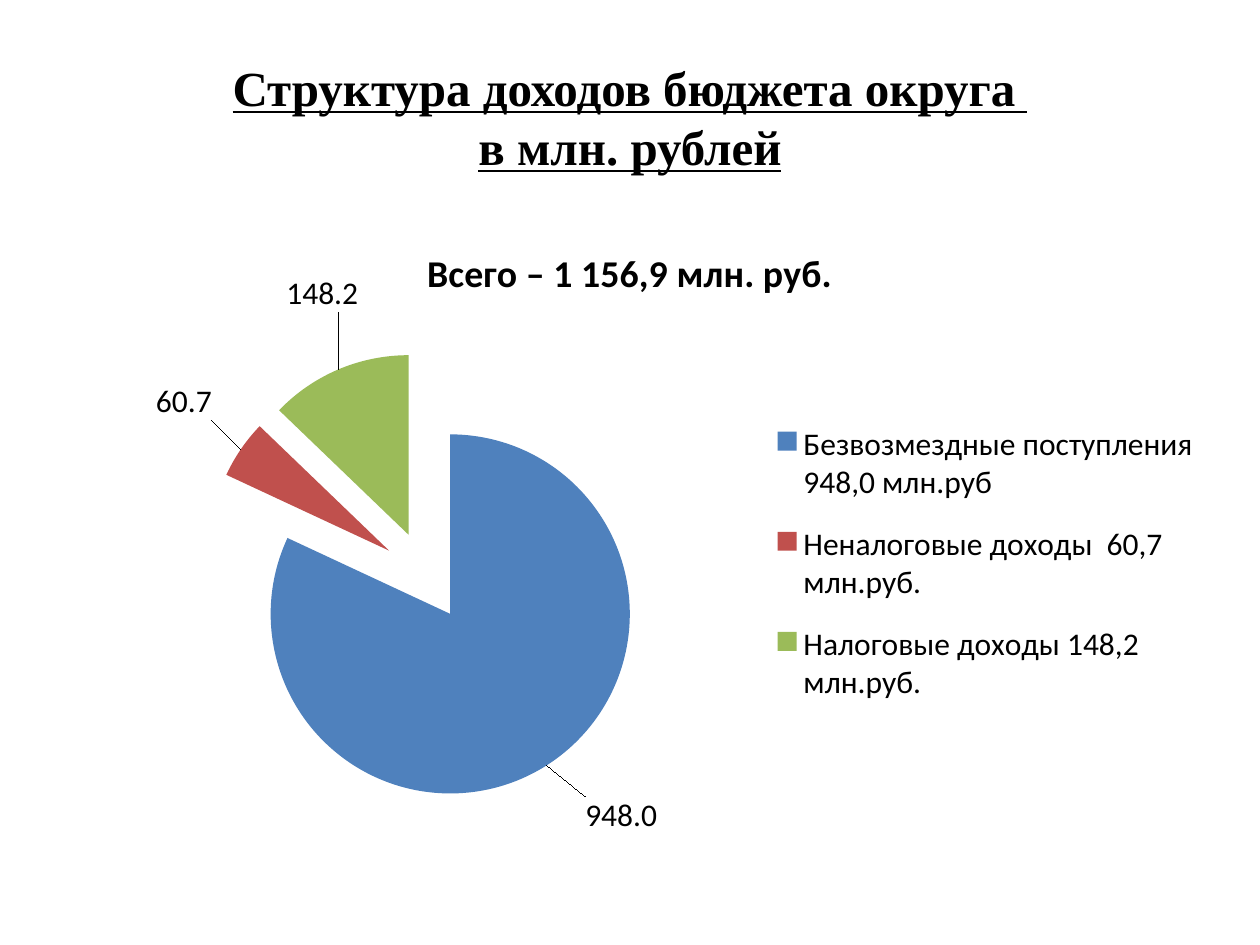
from lxml.etree import SubElement
from pptx import Presentation
from pptx.chart.data import CategoryChartData
from pptx.dml.color import RGBColor
from pptx.enum.chart import XL_CHART_TYPE, XL_LABEL_POSITION, XL_LEGEND_POSITION
from pptx.enum.text import MSO_ANCHOR, MSO_AUTO_SIZE, PP_ALIGN
from pptx.oxml.ns import qn
from pptx.util import Cm, Pt

COLORS = {
    "text": "000000",
    "grants": "4F81BD",
    "non_tax": "C0504D",
    "tax": "9BBB59",
}

# Category, value, colour, label shift as a share of the chart
INCOME = [
    ("Безвозмездные поступления 948,0 млн.руб", 948, "grants", (0.03, 0.04)),
    ("Неналоговые доходы  60,7 млн.руб.", 60.7, "non_tax", (-0.02, -0.04)),
    ("Налоговые доходы 148,2 млн.руб.", 148.2, "tax", (0.02, -0.08)),
]


def add_value(parent, tag, value):
    return SubElement(parent, qn(f"c:{tag}"), val=str(value))


def place(element, index, **settings):
    """Give a chart part a manual layout, in shares of the chart."""
    for old in element.findall(qn("c:layout")):
        element.remove(old)
    layout = SubElement(element, qn("c:layout"))
    manual = SubElement(layout, qn("c:manualLayout"))
    for tag, value in settings.items():
        add_value(manual, tag, value)
    element.insert(index, layout)


class SlideBuilder:
    body_font = "Calibri"
    title_font = "Times New Roman"
    number_format = "#,##0.0"
    edges = {"xMode": "edge", "yMode": "edge"}

    def __init__(self, deck):
        self.page = deck.slides.add_slide(deck.slide_layouts[5])

    def style(self, font, name, size, bold=False):
        font.name = name
        font.size = Pt(size)
        font.bold = bold
        font.color.rgb = RGBColor.from_string(COLORS["text"])

    def title(self, lines, left, top, width, height):
        box = self.page.shapes.title
        box.left, box.top, box.width, box.height = left, top, width, height
        frame = box.text_frame
        frame.auto_size = MSO_AUTO_SIZE.NONE
        frame.vertical_anchor = MSO_ANCHOR.MIDDLE
        para = frame.paragraphs[0]
        para.alignment = PP_ALIGN.CENTER
        for number, line in enumerate(lines):
            if number:
                para.add_line_break()
            span = para.add_run()
            span.text = line
            self.style(span.font, self.title_font, 28, bold=True)
            span.font.underline = True

    def pie(self, heading, rows, left, top, width, height):
        data = CategoryChartData(number_format=self.number_format)
        data.categories = [row[0] for row in rows]
        data.add_series("Series 1", [row[1] for row in rows])
        chart = self.page.shapes.add_chart(
            XL_CHART_TYPE.PIE, left, top, width, height, data
        ).chart
        self.style(chart.font, self.body_font, 18)
        self.chart_title(chart, heading)
        self.legend(chart)
        self.slices(chart.plots[0], rows)
        place(chart.plots[0]._element.getparent(), 0, layoutTarget="inner",
              **self.edges, x=0.12, y=0.21, w=0.39, h=0.72)

    def chart_title(self, chart, heading):
        chart.has_title = True
        span = chart.chart_title.text_frame.paragraphs[0].add_run()
        span.text = heading
        self.style(span.font, self.body_font, 21.6, bold=True)
        place(chart.chart_title._element, 1, **self.edges, x=0.31, y=0.03)

    def legend(self, chart):
        chart.has_legend = True
        legend = chart.legend
        legend.position = XL_LEGEND_POSITION.RIGHT
        legend.include_in_layout = False
        self.style(legend.font, self.body_font, 18)
        place(legend._element, 1, **self.edges, x=0.61, y=0.29, w=0.38, h=0.52)

    def slices(self, plot, rows):
        plot.vary_by_categories = True
        series = plot.series[0]

        # Pull all slices apart
        explosion = add_value(series._element, "explosion", 25)
        series._element.find(qn("c:tx")).addnext(explosion)

        # Shared label settings
        labels = series.data_labels
        labels.show_value = True
        labels.number_format = self.number_format
        labels.number_format_is_linked = False
        labels.position = XL_LABEL_POSITION.OUTSIDE_END
        self.style(labels.font, self.body_font, 18)

        # Slice colours and label places
        for number, (_, _, color, (shift_x, shift_y)) in enumerate(rows):
            point = series.points[number]
            point.format.fill.solid()
            point.format.fill.fore_color.rgb = RGBColor.from_string(COLORS[color])
            label = point.data_label
            label.position = XL_LABEL_POSITION.OUTSIDE_END
            self.style(label.font, self.body_font, 18)
            element = label._dLbl
            place(element, 1, x=shift_x, y=shift_y)
            label_format = SubElement(
                element, qn("c:numFmt"),
                formatCode=self.number_format, sourceLinked="0",
            )
            element.insert(2, label_format)

        # Leader lines
        element = labels._element
        for old in element.findall(qn("c:showLeaderLines")):
            element.remove(old)
        add_value(element, "showLeaderLines", 1)


def main():
    deck = Presentation()
    deck.slide_width, deck.slide_height = Cm(25.4), Cm(19.05)
    builder = SlideBuilder(deck)

    # Title
    builder.title(["Структура доходов бюджета округа ", "в млн. рублей"],
                  Cm(1.27), Cm(0.76), Cm(22.86), Cm(3.18))

    # Income chart
    builder.pie("Всего – 1 156,9 млн. руб.", INCOME,
                Cm(1.27), Cm(4.45), Cm(23.24), Cm(12.57))

    deck.save("out.pptx")


if __name__ == "__main__":
    main()
